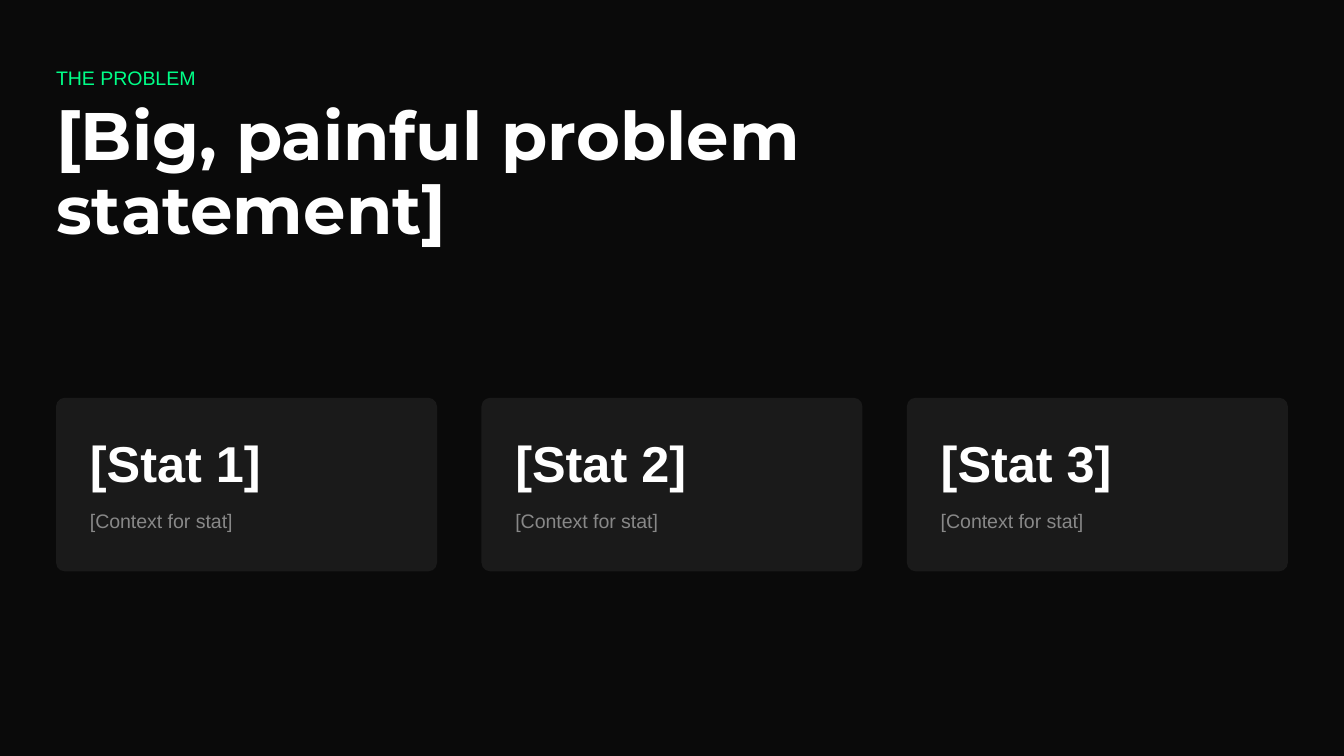
from pptx import Presentation
from pptx.dml.color import RGBColor
from pptx.enum.shapes import MSO_SHAPE
from pptx.enum.text import MSO_ANCHOR, MSO_AUTO_SIZE, PP_ALIGN
from pptx.util import Cm, Pt

BACKGROUND = RGBColor(0x0A, 0x0A, 0x0A)
CARD = RGBColor(0x1A, 0x1A, 0x1A)
GREEN = RGBColor(0x00, 0xFF, 0x88)
WHITE = RGBColor(0xFF, 0xFF, 0xFF)
GREY = RGBColor(0x88, 0x88, 0x88)

MARGIN = 1.06
CARD_WIDTH = 7.2
CARD_GAP = 0.84
CARD_PADDING = 0.64


def write(box, text, size, color, spacing, before, after, bold=False, font="Arial"):
    frame = box.text_frame
    frame.margin_left = frame.margin_top = frame.margin_right = frame.margin_bottom = 0
    frame.word_wrap = True
    frame.auto_size = MSO_AUTO_SIZE.NONE
    frame.vertical_anchor = MSO_ANCHOR.TOP
    para = frame.paragraphs[0]
    para.text = text
    para.alignment = PP_ALIGN.LEFT
    para.line_spacing = Pt(spacing)
    para.space_before = Pt(before)
    para.space_after = Pt(after)
    para.font.name = font
    para.font.size = Pt(size)
    para.font.bold = bold
    para.font.color.rgb = color


deck = Presentation()
deck.slide_width = Cm(25.4)
deck.slide_height = Cm(14.29)
page = deck.slides.add_slide(deck.slide_layouts[5])
page.background.fill.solid()
page.background.fill.fore_color.rgb = BACKGROUND

label = page.shapes.add_textbox(Cm(MARGIN), Cm(1.16), Cm(23.75), Cm(0.53))
write(label, "THE PROBLEM", 10.5, GREEN, 15, 3, 6)

title = page.shapes.title
title.left, title.top, title.width, title.height = Cm(MARGIN), Cm(1.9), Cm(19.9), Cm(1.4)
write(title, "[Big, painful problem statement]", 36, WHITE, 39.6, 0, 24, True, "Montserrat")

for index, stat in enumerate(["[Stat 1]", "[Stat 2]", "[Stat 3]"]):
    left = MARGIN + index * (CARD_WIDTH + CARD_GAP)
    card = page.shapes.add_shape(
        MSO_SHAPE.ROUNDED_RECTANGLE, Cm(left), Cm(7.52), Cm(CARD_WIDTH), Cm(3.28))
    card.adjustments[0] = 0.05
    card.shadow.inherit = False
    card.fill.solid()
    card.fill.fore_color.rgb = CARD
    card.line.fill.background()

    text_left = Cm(left + CARD_PADDING)
    figure = page.shapes.add_textbox(text_left, Cm(8.26), Cm(6.05), Cm(1.06))
    write(figure, stat, 27, WHITE, 30, 3, 6, True)
    context = page.shapes.add_textbox(text_left, Cm(9.53), Cm(6.05), Cm(0.53))
    write(context, "[Context for stat]", 10.5, GREY, 15, 3, 3)

deck.save("out.pptx")
